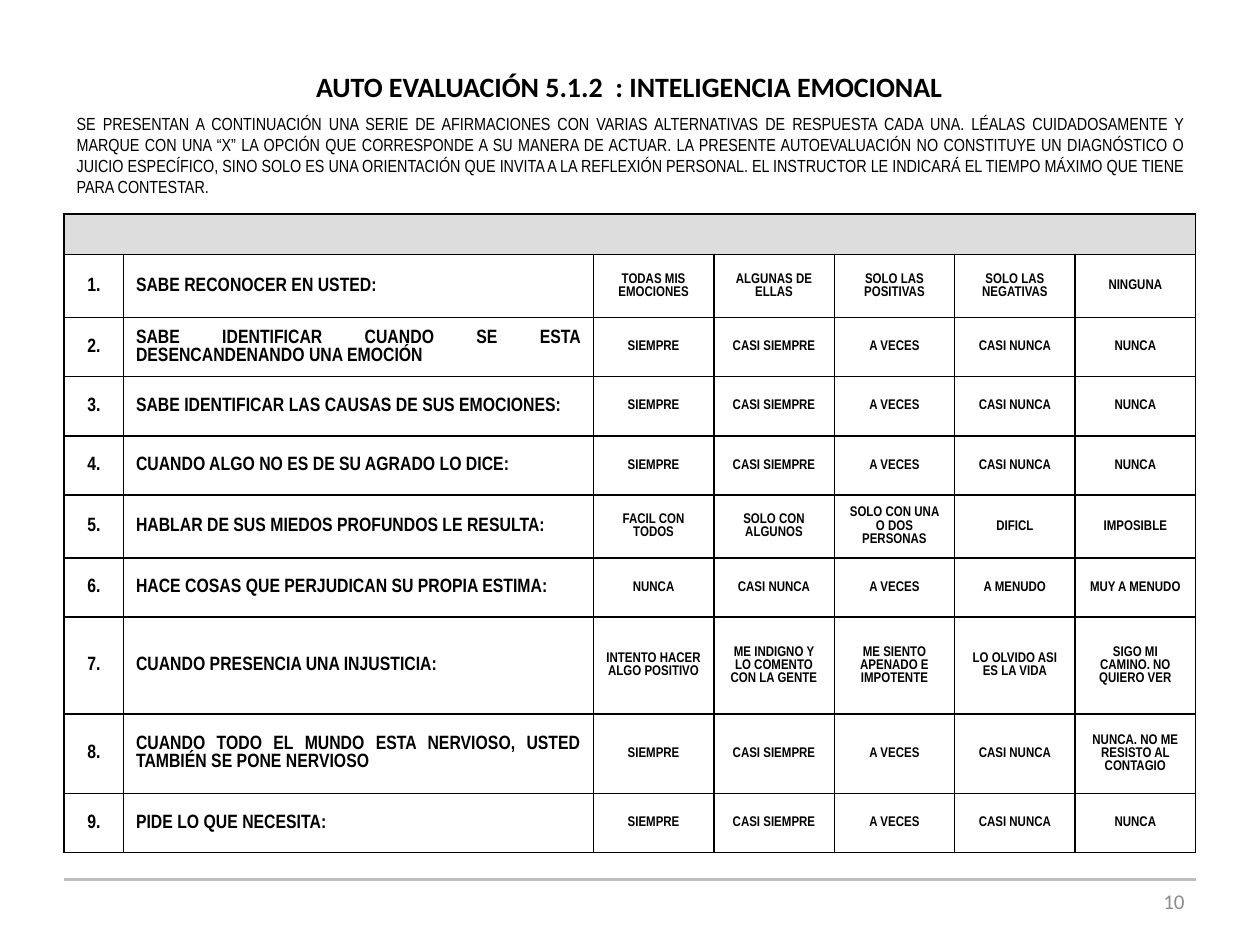
"""Build the emotional intelligence self-assessment slide."""
from lxml.etree import SubElement
from pptx import Presentation
from pptx.dml.color import RGBColor
from pptx.enum.shapes import MSO_CONNECTOR
from pptx.enum.text import MSO_ANCHOR, PP_ALIGN
from pptx.oxml.ns import qn
from pptx.util import Inches, Pt

BLACK = RGBColor(0x00, 0x00, 0x00)
WHITE = RGBColor(0xFF, 0xFF, 0xFF)
HEADER_GRAY = RGBColor(0xDD, 0xDD, 0xDD)
RULE_GRAY = RGBColor(0xBF, 0xBF, 0xBF)
NUMBER_GRAY = RGBColor(0x8C, 0x8C, 0x8C)

LEFT, RIGHT = 0.51, 9.49
WIDTH = RIGHT - LEFT
NUMBER_WIDTH, QUESTION_WIDTH = 0.47, 3.73
ANSWER_WIDTH = (WIDTH - NUMBER_WIDTH - QUESTION_WIDTH) / 5
COLUMN_WIDTHS = [NUMBER_WIDTH, QUESTION_WIDTH] + [ANSWER_WIDTH] * 5
HEADER_HEIGHT = 0.32
FREQUENCY = ["SIEMPRE", "CASI SIEMPRE", "A VECES", "CASI NUNCA", "NUNCA"]
QUESTIONS = [
    (0.5, "SABE RECONOCER EN USTED:",
     ["TODAS MIS EMOCIONES", "ALGUNAS DE ELLAS", "SOLO LAS POSITIVAS",
      "SOLO LAS NEGATIVAS", "NINGUNA"]),
    (0.47, "SABE IDENTIFICAR CUANDO SE ESTA DESENCANDENANDO UNA EMOCIÓN", FREQUENCY),
    (0.47, "SABE IDENTIFICAR LAS CAUSAS DE SUS EMOCIONES:", FREQUENCY),
    (0.47, "CUANDO ALGO NO ES DE SU AGRADO LO DICE:", FREQUENCY),
    (0.5, "HABLAR DE SUS MIEDOS PROFUNDOS LE RESULTA:",
     ["FACIL CON TODOS", "SOLO CON ALGUNOS", "SOLO CON UNA O DOS PERSONAS",
      "DIFICL", "IMPOSIBLE"]),
    (0.47, "HACE COSAS QUE PERJUDICAN SU PROPIA ESTIMA:",
     ["NUNCA", "CASI NUNCA", "A VECES", "A MENUDO", "MUY A MENUDO"]),
    (0.77, "CUANDO PRESENCIA UNA INJUSTICIA:",
     ["INTENTO HACER ALGO POSITIVO", "ME INDIGNO Y LO COMENTO CON LA GENTE",
      "ME SIENTO APENADO E IMPOTENTE", "LO OLVIDO ASI ES LA VIDA",
      "SIGO MI CAMINO. NO QUIERO VER"]),
    (0.63, "CUANDO TODO EL MUNDO ESTA NERVIOSO, USTED TAMBIÉN SE PONE NERVIOSO",
     FREQUENCY[:4] + ["NUNCA. NO ME RESISTO AL CONTAGIO"]),
    (0.47, "PIDE LO QUE NECESITA:", FREQUENCY),
]
INTRO = (
    "SE PRESENTAN A CONTINUACIÓN UNA SERIE DE AFIRMACIONES CON VARIAS ALTERNATIVAS DE "
    "RESPUESTA CADA UNA. LÉALAS CUIDADOSAMENTE Y MARQUE CON UNA “X” LA OPCIÓN QUE "
    "CORRESPONDE A SU MANERA DE ACTUAR. LA PRESENTE AUTOEVALUACIÓN NO CONSTITUYE UN "
    "DIAGNÓSTICO O JUICIO ESPECÍFICO, SINO SOLO ES UNA ORIENTACIÓN QUE INVITA A LA "
    "REFLEXIÓN PERSONAL. EL INSTRUCTOR LE INDICARÁ EL TIEMPO MÁXIMO QUE TIENE PARA "
    "CONTESTAR."
)


def write_text(frame, text, alignment, color=BLACK, **font_format):
    paragraph = frame.paragraphs[0]
    paragraph.alignment = alignment
    run = paragraph.add_run()
    run.text = text
    run.font.color.rgb = color
    for name, value in font_format.items():
        setattr(run.font, name, value)


def format_cell(cell, color):
    properties = cell._tc.get_or_add_tcPr()
    for side in ("a:lnL", "a:lnR", "a:lnT", "a:lnB"):
        border = SubElement(properties, qn(side), w=str(Pt(1)))
        fill = SubElement(border, qn("a:solidFill"))
        SubElement(fill, qn("a:srgbClr"), val=str(BLACK))
    cell.fill.solid()
    cell.fill.fore_color.rgb = color
    cell.vertical_anchor = MSO_ANCHOR.MIDDLE


presentation = Presentation()
presentation.slide_width = Inches(10)
presentation.slide_height = Inches(7.5)
slide = presentation.slides.add_slide(presentation.slide_layouts[6])

footer_rule = slide.shapes.add_connector(
    MSO_CONNECTOR.STRAIGHT, Inches(LEFT), Inches(6.98), Inches(RIGHT), Inches(6.98))
footer_rule.line.color.rgb = RULE_GRAY
footer_rule.line.width = Pt(2)
SubElement(footer_rule._element.spPr, qn("a:effectLst"))

row_heights = [HEADER_HEIGHT] + [height for height, _, _ in QUESTIONS]
table = slide.shapes.add_table(
    len(row_heights), len(COLUMN_WIDTHS), Inches(LEFT), Inches(1.7),
    Inches(WIDTH), Inches(sum(row_heights))).table
table.first_row = False
table.horz_banding = False
for column, width in zip(table.columns, COLUMN_WIDTHS):
    column.width = Inches(width)
for row, height in zip(table.rows, row_heights):
    row.height = Inches(height)

for cell in table.rows[0].cells:
    format_cell(cell, HEADER_GRAY)
    SubElement(cell.text_frame.paragraphs[0]._p, qn("a:endParaRPr"), sz="1100")
table.cell(0, 0).merge(table.cell(0, len(COLUMN_WIDTHS) - 1))

for number, (_, question, answers) in enumerate(QUESTIONS, start=1):
    for index, text in enumerate([f"{number}.", question] + answers):
        cell = table.cell(number, index)
        format_cell(cell, WHITE)
        write_text(
            cell.text_frame, text, PP_ALIGN.JUSTIFY if index == 1 else PP_ALIGN.CENTER,
            name="Arial Narrow", size=Pt(11 if index < 2 else 8), bold=True)

TEXT_BOXES = [
    ((LEFT, 0.85, WIDTH, 0.77), INTRO, PP_ALIGN.JUSTIFY, MSO_ANCHOR.TOP,
     {"name": "Arial Narrow", "size": Pt(10)}),
    ((0.27, 0.5, 9.45, 0.37), "AUTO EVALUACIÓN 5.1.2  : INTELIGENCIA EMOCIONAL",
     PP_ALIGN.CENTER, MSO_ANCHOR.TOP, {"name": "Calibri", "size": Pt(16), "bold": True}),
    ((7.17, 6.95, 2.33, 0.4), "10", PP_ALIGN.RIGHT, MSO_ANCHOR.MIDDLE,
     {"name": "Calibri", "size": Pt(12), "color": NUMBER_GRAY}),
]
for bounds, text, alignment, anchor, font_format in TEXT_BOXES:
    frame = slide.shapes.add_textbox(*map(Inches, bounds)).text_frame
    frame.word_wrap = True
    frame.vertical_anchor = anchor
    write_text(frame, text, alignment, **font_format)

presentation.save("out.pptx")
